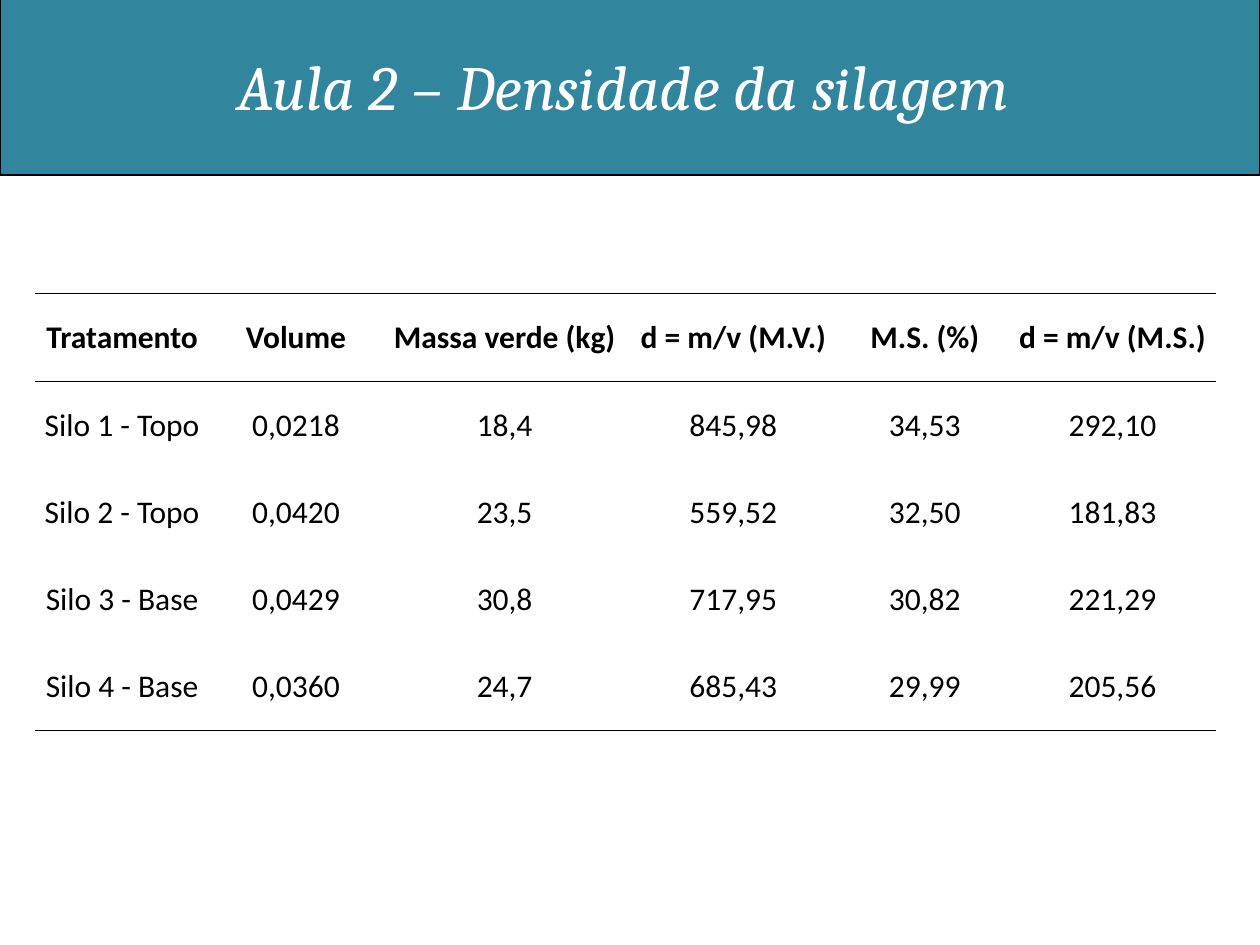
"""Build a slide with a title band and a table of silage densities."""
from dataclasses import dataclass

from lxml import etree
from pptx import Presentation
from pptx.dml.color import RGBColor
from pptx.enum.shapes import MSO_SHAPE
from pptx.enum.text import MSO_ANCHOR, PP_ALIGN
from pptx.oxml.ns import qn
from pptx.util import Pt

RECT = MSO_SHAPE.RECTANGLE
MIDDLE = MSO_ANCHOR.MIDDLE
CENTER = PP_ALIGN.CENTER

TITLE = "Aula 2 – Densidade da silagem "
ROWS = [
    ("Tratamento", "Volume", "Massa verde (kg)", "d = m/v (M.V.)", "M.S. (%)", "d = m/v (M.S.)"),
    ("Silo 1 - Topo", "0,0218", "18,4", "845,98", "34,53", "292,10"),
    ("Silo 2 - Topo", "0,0420", "23,5", "559,52", "32,50", "181,83"),
    ("Silo 3 - Base", "0,0429", "30,8", "717,95", "30,82", "221,29"),
    ("Silo 4 - Base", "0,0360", "24,7", "685,43", "29,99", "205,56"),
]
WIDTHS = (99.4, 99.4, 139, 122.4, 96.5, 118)
WIDE, HIGH = 720, 540
BAND = (0, -2.16, WIDE, 102.2)
LEFT, TOP, STEP = 20.1, 167.9, 49.87


@dataclass(frozen=True)
class Theme:
    """Colours, fonts and sizes of the slide."""
    teal: str = "31859C"
    white: str = "FFFFFF"
    black: str = "000000"
    head: str = "Cambria"
    body: str = "Calibri"
    big: float = 36
    base: float = 18
    edge: float = 0.75
    rule: float = 0.5


LOOK = Theme()


def write(frame, text, font=LOOK.body, size=LOOK.base, color=LOOK.black, bold=False, slant=False):
    """Put one centred line of text into a frame."""
    line = frame.paragraphs[0]
    line.alignment = CENTER
    run = line.add_run()
    run.text = text
    run.font.name = font
    run.font.size = Pt(size)
    run.font.bold = bold
    run.font.italic = slant
    run.font.color.rgb = RGBColor.from_string(color)


def border(cell, sides):
    """Rule the named sides of a cell and clear the others."""
    props = cell._tc.get_or_add_tcPr()
    for spot, side in enumerate("LRTB"):
        line = etree.Element(qn(f"a:ln{side}"), w=str(Pt(LOOK.rule)))
        if side in sides:
            fill = etree.SubElement(line, qn("a:solidFill"))
            etree.SubElement(fill, qn("a:srgbClr"), val=LOOK.black)
        else:
            etree.SubElement(line, qn("a:noFill"))
        props.insert(spot, line)


def add_band(slide):
    """Draw the title band."""
    band = slide.shapes.add_shape(RECT, *map(Pt, BAND))
    band.shadow.inherit = False
    band.fill.solid()
    band.fill.fore_color.rgb = RGBColor.from_string(LOOK.teal)
    band.line.color.rgb = RGBColor.from_string(LOOK.black)
    band.line.width = Pt(LOOK.edge)
    frame = band.text_frame
    frame.word_wrap = False
    frame.vertical_anchor = MIDDLE
    write(frame, TITLE, font=LOOK.head, size=LOOK.big, color=LOOK.white, slant=True)


def add_grid(slide):
    """Draw the table with rules around its head and at its foot."""
    size = (sum(WIDTHS), STEP * len(ROWS))
    grid = slide.shapes.add_table(len(ROWS), len(WIDTHS), *map(Pt, (LEFT, TOP, *size))).table
    grid.first_row = grid.horz_banding = False
    for col, width in zip(grid.columns, WIDTHS):
        col.width = Pt(width)
    rules = {0: "TB", 1: "T", len(ROWS) - 1: "B"}
    for r, row in enumerate(ROWS):
        grid.rows[r].height = Pt(STEP)
        for c, text in enumerate(row):
            cell = grid.cell(r, c)
            cell.fill.background()
            cell.vertical_anchor = MIDDLE
            cell.margin_left = cell.margin_right = cell.margin_top = Pt(0.75)
            cell.margin_bottom = 0
            border(cell, rules.get(r, ""))
            write(cell.text_frame, text, bold=r == 0)


def main():
    """Make the deck and save it."""
    deck = Presentation()
    deck.slide_width, deck.slide_height = Pt(WIDE), Pt(HIGH)
    slide = deck.slides.add_slide(deck.slide_layouts[6])
    add_band(slide)
    add_grid(slide)
    deck.save("out.pptx")


if __name__ == "__main__":
    main()
